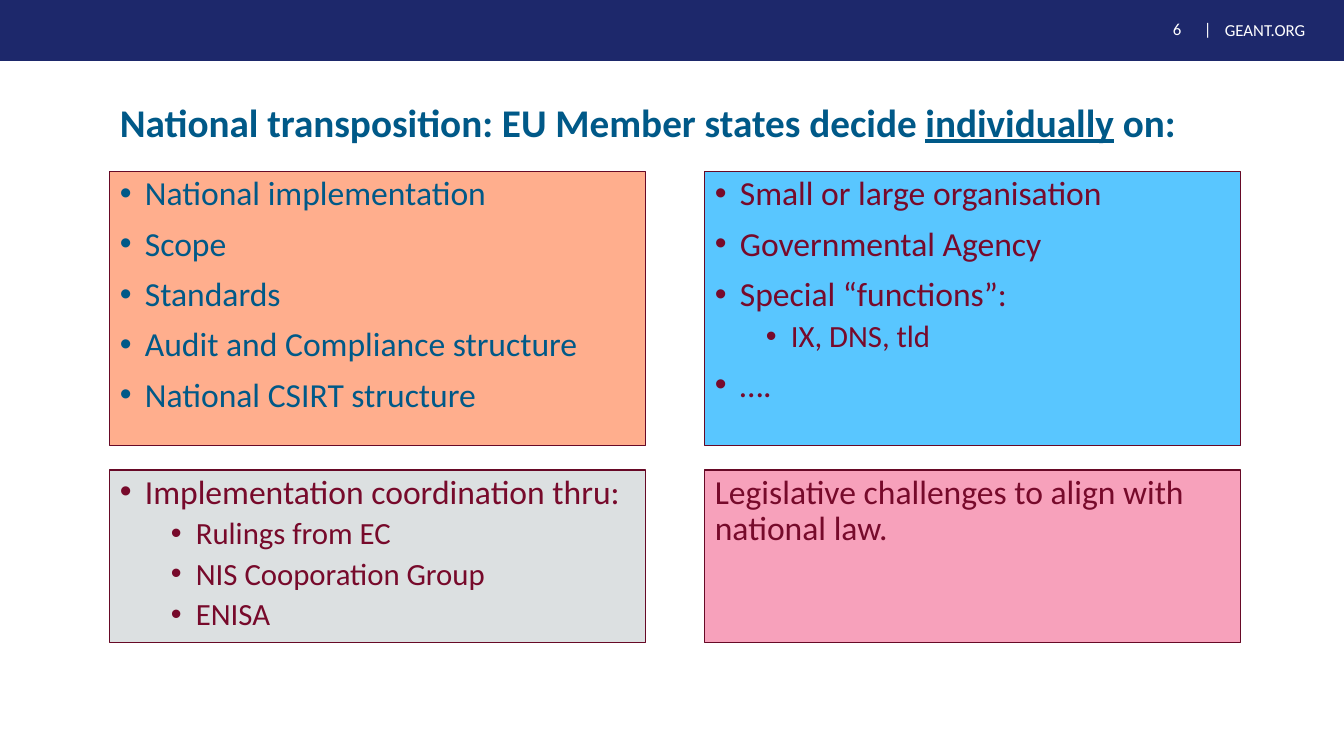
from lxml import etree
from pptx import Presentation
from pptx.dml.color import RGBColor
from pptx.enum.shapes import MSO_SHAPE
from pptx.enum.text import MSO_ANCHOR, PP_ALIGN
from pptx.oxml.ns import qn
from pptx.util import Emu, Pt

RECTANGLE = MSO_SHAPE.RECTANGLE
TOP, MIDDLE = MSO_ANCHOR.TOP, MSO_ANCHOR.MIDDLE
LEFT = PP_ALIGN.LEFT

# Content
NAVY, BLUE, WINE, BORDER, WHITE = "1D286B", "005988", "770A2B", "670926", "FFFFFF"
PAGE_MARK = "6\t|"
SITE = "GEANT.ORG"
TITLE = [
    ("National transposition: EU Member states decide ", False),
    ("individually", True),
    (" on:", False),
]
# Each panel: fill, text colour, lines as (style, text)
PANELS = [
    ("FFAE8D", BLUE, [
        ("bullet", "National implementation"),
        ("bullet", "Scope"),
        ("bullet", "Standards"),
        ("bullet", "Audit and Compliance structure"),
        ("bullet", "National CSIRT structure"),
    ]),
    ("59C6FF", WINE, [
        ("bullet", "Small or large organisation"),
        ("bullet", "Governmental Agency"),
        ("bullet", "Special “functions”:"),
        ("sub", "IX, DNS, tld"),
        ("bullet", "…."),
    ]),
    ("DCE0E1", WINE, [
        ("bullet", "Implementation coordination thru:"),
        ("sub", "Rulings from EC"),
        ("sub", "NIS Cooporation Group"),
        ("sub", "ENISA"),
    ]),
    ("F7A1BB", WINE, [("plain", "Legislative challenges to align with national law.")]),
]
# Style: level, size in pt, space before in pt, left margin in px (None: no bullet)
STYLES = {
    "bullet": (0, 24, 10, 25),
    "sub": (1, 22, 5, 76),
    "plain": (0, 24, 10, None),
}

# Layout in px
PX_PER_INCH = 100.8
SLIDE_SIZE = (1344, 756)
COLUMNS = (110, 705)
ROWS = ((172, 274), (470, 173))
PANEL_WIDTH = 536
HANGING = 25
PAGE_TAB = 31


def px(length):
    return Emu(round(length * 914400 / PX_PER_INCH))


def color(hex_value):
    return RGBColor.from_string(hex_value)


def format_font(font, **values):
    values = {"name": "Calibri", **values}
    font.color.rgb = color(values.pop("color"))
    for name, value in values.items():
        setattr(font, name, value)


def add_rectangle(slide, box, fill, line=None):
    shape = slide.shapes.add_shape(RECTANGLE, *map(px, box))
    shape.shadow.inherit = False
    shape.fill.solid()
    shape.fill.fore_color.rgb = color(fill)
    if line:
        shape.line.color.rgb = color(line)
        shape.line.width = Pt(0.75)
    else:
        shape.line.fill.background()
    return shape


def add_text(slide, box, runs, **font_values):
    frame = slide.shapes.add_textbox(*map(px, box)).text_frame
    frame.word_wrap = True
    frame.vertical_anchor = MIDDLE
    paragraph = frame.paragraphs[0]
    paragraph.line_spacing = 0.9
    for text, underline in runs:
        run = paragraph.add_run()
        run.text = text
        format_font(run.font, underline=underline, **font_values)
    return paragraph


def add_bullet(paragraph, margin):
    properties = paragraph._p.get_or_add_pPr()
    properties.set("marL", str(px(margin)))
    properties.set("indent", str(-px(HANGING)))
    etree.SubElement(properties, qn("a:buFont")).set("typeface", "Arial")
    etree.SubElement(properties, qn("a:buChar")).set("char", "•")


def add_panel(slide, box, fill, text_color, lines):
    frame = add_rectangle(slide, box, fill, BORDER).text_frame
    frame.word_wrap = True
    frame.vertical_anchor = TOP
    for index, (style, text) in enumerate(lines):
        level, size, space, margin = STYLES[style]
        paragraph = frame.paragraphs[0] if index == 0 else frame.add_paragraph()
        paragraph.alignment = LEFT
        paragraph.level = level
        paragraph.line_spacing = 0.9
        paragraph.space_before = Pt(space if index else 0)
        if margin is not None:
            add_bullet(paragraph, margin)
        run = paragraph.add_run()
        run.text = text
        format_font(run.font, size=Pt(size), color=text_color)


def main():
    presentation = Presentation()
    presentation.slide_width, presentation.slide_height = map(px, SLIDE_SIZE)
    slide = presentation.slides.add_slide(presentation.slide_layouts[6])

    # Header band with page number and site
    add_rectangle(slide, (0, -4, 1344, 65), NAVY)
    page = add_text(slide, (1163, 12, 60, 36), [(PAGE_MARK, False)],
                    size=Pt(12), color=WHITE)
    tabs = etree.SubElement(page._p.get_or_add_pPr(), qn("a:tabLst"))
    etree.SubElement(tabs, qn("a:tab"), pos=str(px(PAGE_TAB)), algn="l")
    add_text(slide, (1215, 15, 129, 32), [(SITE, False)], size=Pt(12), color=WHITE)

    # Title
    add_text(slide, (110, 101, 1094, 47), TITLE, size=Pt(28), color=BLUE, bold=True)

    # Two by two panels
    boxes = [(left, top, PANEL_WIDTH, height) for top, height in ROWS for left in COLUMNS]
    for box, panel in zip(boxes, PANELS):
        add_panel(slide, box, *panel)

    presentation.save("out.pptx")


if __name__ == "__main__":
    main()
